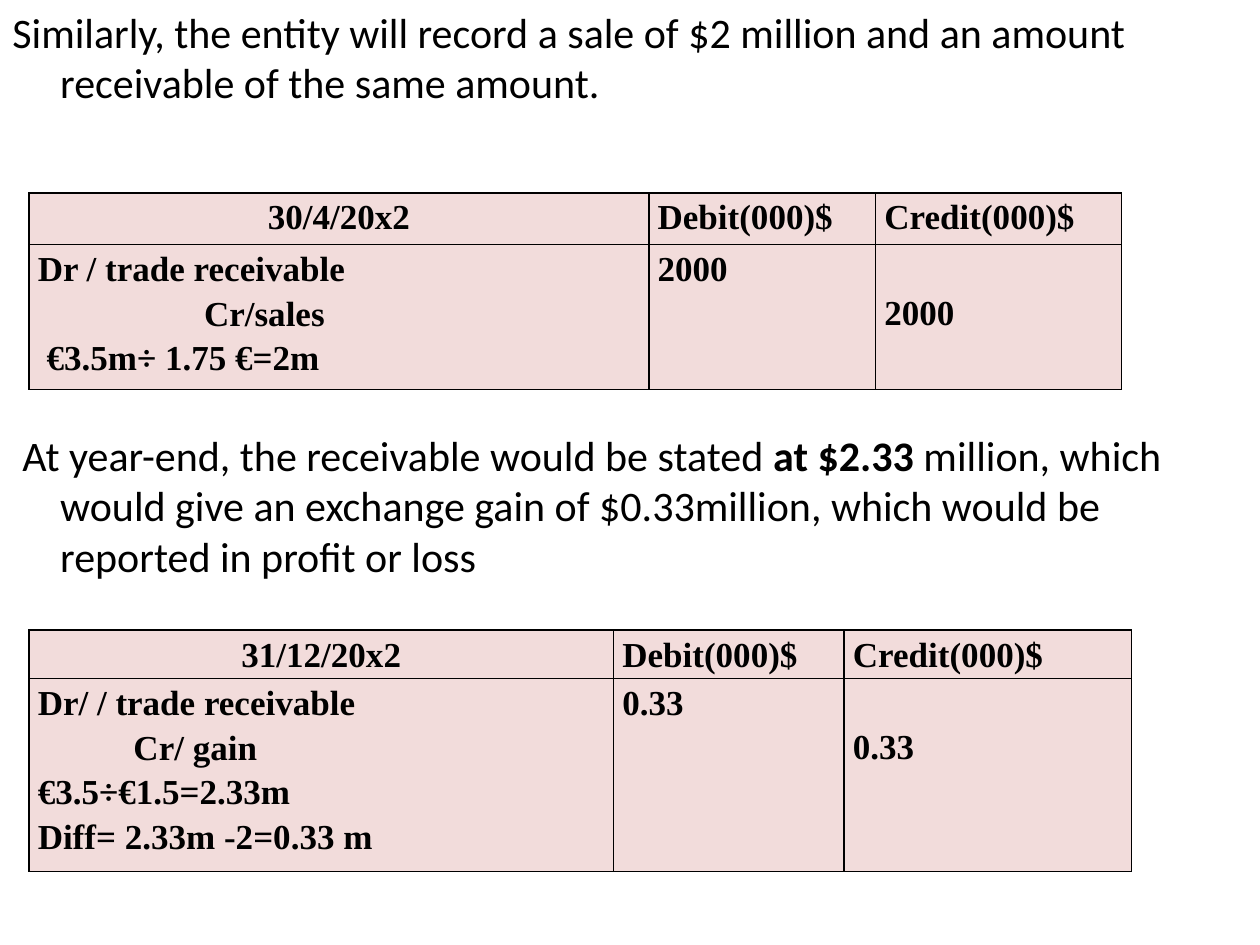
"""Build a slide of two journal entries for a foreign-currency receivable."""
from lxml import etree
from pptx import Presentation
from pptx.dml.color import RGBColor
from pptx.enum import text
from pptx.oxml import ns
from pptx.util import Inches, Pt

THEME = {
    "ink": "000000", "cell": "F2DCDB",
    "body_font": "Calibri", "body_size": 24,
    "table_font": "Times New Roman", "table_size": 20,
    "spacing": 1.15, "border": 1,
}
HANGING = 0.38
CELL_SIDE = 0.07
CREDIT_DROP = 0.35

STATEMENTS = [
    {"top": 0, "height": 1, "first_indent": -HANGING, "runs": [
        ("Similarly, the entity will record a sale of $2 million and an amount "
         "receivable of the same amount.", False)]},
    {"top": 3.36, "height": 1.4, "first_indent": -0.3, "runs": [
        ("At year-end, the receivable would be stated ", False),
        ("at $2.33", True),
        (" million, which would give an exchange gain of $0.33million, which "
         "would be reported in profit or loss", False)]},
]

ENTRIES = [
    {"top": 1.53, "widths": [4.92, 1.8, 1.95], "heights": [0.41, 1.06],
     "date": "30/4/20x2", "amount": "2000",
     "lines": [("Dr / trade receivable", 0), ("Cr/sales", 1.32),
               ("€3.5m÷ 1.75 €=2m", 0.07)]},
    {"top": 5, "widths": [4.64, 1.83, 2.28], "heights": [0.35, 1.42],
     "date": "31/12/20x2", "amount": "0.33",
     "lines": [("Dr/ / trade receivable", 0), ("Cr/ gain", 0.76),
               ("€3.5÷€1.5=2.33m", 0), ("Diff= 2.33m -2=0.33 m", 0)]},
]
TABLE_LEFT = 0.23


def style_run(r, kind, bold):
    r.font.name = THEME[kind + "_font"]
    r.font.size = Pt(THEME[kind + "_size"])
    r.font.bold = bold
    r.font.color.rgb = RGBColor.from_string(THEME["ink"])


def indent(p, left, first=0):
    pPr = p._p.get_or_add_pPr()
    pPr.set("marL", str(Inches(left)))
    pPr.set("indent", str(Inches(first)))


def add_statement(slide, statement):
    sp = slide.shapes.add_textbox(0, Inches(statement["top"]), Inches(10),
                                  Inches(statement["height"]))
    tf = sp.text_frame
    tf.word_wrap = True
    p = tf.paragraphs[0]
    indent(p, HANGING, statement["first_indent"])
    for words, bold in statement["runs"]:
        r = p.add_run()
        r.text = words
        style_run(r, "body", bold)


def add_borders(cell):
    tcPr = cell._tc.get_or_add_tcPr()
    for side in ("lnL", "lnR", "lnT", "lnB"):
        ln = etree.SubElement(tcPr, ns.qn("a:" + side), w=str(Pt(THEME["border"])))
        fill = etree.SubElement(ln, ns.qn("a:solidFill"))
        etree.SubElement(fill, ns.qn("a:srgbClr"), val=THEME["ink"])


def fill_cell(cell, lines, drop=0, centred=False):
    add_borders(cell)
    cell.fill.solid()
    cell.fill.fore_color.rgb = RGBColor.from_string(THEME["cell"])
    cell.margin_left = cell.margin_right = Inches(CELL_SIDE)
    cell.margin_top, cell.margin_bottom = Inches(drop), 0
    tf = cell.text_frame
    tf.text = "\n".join(words for words, _ in lines)
    for p, (_, left) in zip(tf.paragraphs, lines):
        indent(p, left)
        p.line_spacing = THEME["spacing"]
        p.alignment = text.PP_ALIGN.CENTER if centred else text.PP_ALIGN.LEFT
        style_run(p.runs[0], "table", True)


def add_entry(slide, entry):
    widths, heights = entry["widths"], entry["heights"]
    table = slide.shapes.add_table(
        len(heights), len(widths), Inches(TABLE_LEFT), Inches(entry["top"]),
        Inches(sum(widths)), Inches(sum(heights))).table
    for column, width in zip(table.columns, widths):
        column.width = Inches(width)
    for row, height in zip(table.rows, heights):
        row.height = Inches(height)
    for i, heading in enumerate([entry["date"], "Debit(000)$", "Credit(000)$"]):
        fill_cell(table.cell(0, i), [(heading, 0)], centred=i == 0)
    amount = [(entry["amount"], 0)]
    fill_cell(table.cell(1, 0), entry["lines"])
    fill_cell(table.cell(1, 1), amount)
    fill_cell(table.cell(1, 2), amount, drop=CREDIT_DROP)


def main():
    prs = Presentation()
    prs.slide_width, prs.slide_height = Inches(10), Inches(7.5)
    slide = prs.slides.add_slide(prs.slide_layouts[6])
    for statement in STATEMENTS:
        add_statement(slide, statement)
    for entry in ENTRIES:
        add_entry(slide, entry)
    prs.save("out.pptx")


if __name__ == "__main__":
    main()
